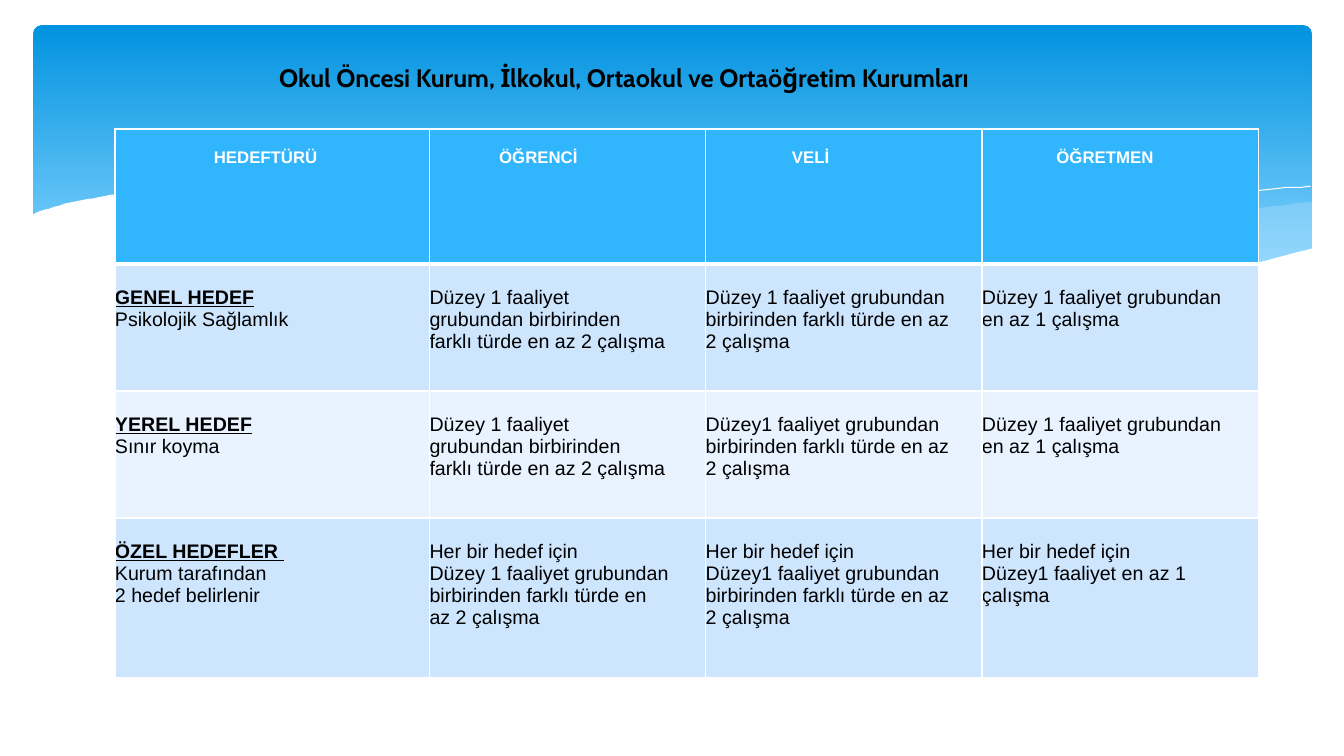
from dataclasses import dataclass
from typing import NamedTuple

import lxml.etree
import pptx
import pptx.dml.color
import pptx.enum.shapes
import pptx.enum.text
import pptx.oxml
import pptx.oxml.ns
import pptx.util

EMU_PER_PX = 9144
Point = tuple[float, float]
Curve = list[Point]


@dataclass(frozen=True)
class Theme:
    white: str = "FFFFFF"
    black: str = "000000"
    sky_top: str = "0293E0"
    sky_bottom: str = "83D3FE"
    wave: str = "C6E7FC"
    header: str = "31B6FD"
    band_dark: str = "CEE5FE"
    band_light: str = "E8F3FF"
    title_font: str = "Cabin"
    table_font: str = "Arial"
    title_size: int = 18
    header_size: int = 12
    body_size: int = 14
    thin: int = 1
    thick: int = 3


THEME = Theme()


class Wave(NamedTuple):
    curves: list[Curve]
    fill: str | None = None
    opacity: int = 100


class Entry(NamedTuple):
    lines: list[str]
    right_inset: int
    titled: bool = False


class Band(NamedTuple):
    height: int
    fill: str
    entries: list[Entry]
    is_header: bool = False


WAVES = [
    Wave([[(1301, 200), (1246, 207), (1188, 216), (1147, 223), (1073, 237),
           (1005, 248), (941, 257), (882, 265)],
          [(882, 265), (940, 271), (993, 275), (1041, 277), (1085, 278), (1126, 277),
           (1163, 274), (1196, 270), (1228, 265), (1257, 259), (1301, 247)]],
         THEME.wave, 29),
    Wave([[(1190, 273), (1116, 265), (1034, 254), (941, 240), (839, 222), (778, 211),
           (721, 203), (669, 196), (619, 191), (560, 187), (506, 185), (459, 186),
           (418, 188), (382, 191)],
          [(382, 191), (456, 199), (511, 207), (599, 222), (706, 240), (802, 255),
           (887, 266), (963, 274), (1030, 277), (1090, 278), (1143, 277), (1190, 273)]],
         THEME.wave, 40),
    Wave([[(412, 195), (458, 190), (516, 187), (577, 187), (652, 190), (742, 197),
           (848, 208), (970, 226), (1108, 251), (1210, 272)]]),
    Wave([[(818, 257), (870, 246), (927, 235), (997, 223), (1075, 210), (1155, 199),
           (1213, 192), (1267, 187), (1300, 185)]]),
    Wave([[(1303, 246), (1254, 259), (1198, 269), (1134, 275), (1078, 277), (1015, 275),
           (944, 270), (863, 262), (772, 250), (671, 233), (596, 220), (521, 207),
           (453, 197), (390, 190), (333, 186), (282, 184), (235, 184), (194, 185),
           (158, 187), (127, 191), (101, 195), (79, 199), (54, 205), (31, 213)],
          [(31, 213), (31, 329)], [(31, 329), (1303, 329)]],
         THEME.white),
]

COLUMN_WIDTHS = [312, 274, 274, 274]
ONE_ACTIVITY = "Düzey 1 faaliyet grubundan en az 1 çalışma"
TWO_ACTIVITIES = "Düzey 1 faaliyet grubundan birbirinden farklı türde en az 2 çalışma"
TWO_ACTIVITIES_JOINED = TWO_ACTIVITIES.replace("Düzey 1", "Düzey1")
EACH_GOAL = "Her bir hedef için"

BANDS = [
    Band(134, THEME.header, [
        Entry(["HEDEFTÜRÜ"], 13), Entry(["ÖĞRENCİ"], 58),
        Entry(["VELİ"], 66), Entry(["ÖĞRETMEN"], 30)], True),
    Band(126, THEME.band_dark, [
        Entry(["GENEL HEDEF", "Psikolojik Sağlamlık"], 0, True),
        Entry([TWO_ACTIVITIES], 39), Entry([TWO_ACTIVITIES], 24), Entry([ONE_ACTIVITY], 24)]),
    Band(126, THEME.band_light, [
        Entry(["YEREL HEDEF", "Sınır koyma"], 0, True),
        Entry([TWO_ACTIVITIES], 39), Entry([TWO_ACTIVITIES_JOINED], 24),
        Entry([ONE_ACTIVITY], 24)]),
    Band(158, THEME.band_dark, [
        Entry(["ÖZEL HEDEFLER ", "Kurum tarafından", "2 hedef belirlenir"], 0, True),
        Entry([EACH_GOAL, TWO_ACTIVITIES], 34),
        Entry([EACH_GOAL, TWO_ACTIVITIES_JOINED], 24),
        Entry([EACH_GOAL, "Düzey1 faaliyet en az 1 çalışma"], 24)]),
]


def px(length: int) -> pptx.util.Emu:
    return pptx.util.Emu(length * EMU_PER_PX)


def rgb(colour: str) -> pptx.dml.color.RGBColor:
    return pptx.dml.color.RGBColor.from_string(colour)


def smooth(curve: Curve, steps: int = 5) -> Curve:
    padded = [curve[0], *curve, curve[-1]]
    points = [curve[0]]
    for a, b, c, d in zip(padded, padded[1:], padded[2:], padded[3:]):
        for step in range(1, steps + 1):
            t = step / steps
            points.append(tuple(
                (2 * q + (r - p) * t + (2 * p - 5 * q + 4 * r - s) * t ** 2
                 + (3 * q - p - 3 * r + s) * t ** 3) / 2
                for p, q, r, s in zip(a, b, c, d)))
    return points


def draw_sky(slide) -> None:
    sky = slide.shapes.add_shape(
        pptx.enum.shapes.MSO_SHAPE.ROUNDED_RECTANGLE, px(33), px(25), px(1268), px(270))
    sky.adjustments[0] = 0.03
    sky.shadow.inherit = False
    sky.line.fill.background()
    sky.fill.gradient()
    sky.fill.gradient_angle = 270
    stops = [(0, THEME.sky_top), (0.9, THEME.sky_bottom)]
    for stop, (position, colour) in zip(sky.fill.gradient_stops, stops):
        stop.position = position
        stop.color.rgb = rgb(colour)


def draw_wave(slide, wave: Wave) -> None:
    points = [point for curve in wave.curves for point in smooth(curve)]
    builder = slide.shapes.build_freeform(*points[0], scale=EMU_PER_PX)
    builder.add_line_segments(points[1:], close=wave.fill is not None)
    outline = builder.convert_to_shape()
    outline.shadow.inherit = False
    if wave.fill is None:
        outline.fill.background()
        outline.line.color.rgb = rgb(THEME.white)
        outline.line.width = pptx.util.Pt(0)
        return
    outline.line.fill.background()
    outline.fill.solid()
    outline.fill.fore_color.rgb = rgb(wave.fill)
    if wave.opacity < 100:
        colour = outline.fill._xPr.find(".//" + pptx.oxml.ns.qn("a:srgbClr"))
        lxml.etree.SubElement(
            colour, pptx.oxml.ns.qn("a:alpha"), val=str(wave.opacity * 1000))


def write_run(paragraph, text: str, font: str, size: int, colour: str,
              bold: bool = False, underline: bool = False) -> None:
    run = paragraph.add_run()
    run.text = text
    run.font.name = font
    run.font.size = pptx.util.Pt(size)
    run.font.color.rgb = rgb(colour)
    run.font.bold = bold
    run.font.underline = underline


def draw_borders(cell, top: int, bottom: int) -> None:
    properties = cell._tc.get_or_add_tcPr()
    sides = {"L": THEME.thin, "R": THEME.thin, "T": top, "B": bottom}
    for index, (side, width) in enumerate(sides.items()):
        border = pptx.oxml.parse_xml(
            f'<a:ln{side} {pptx.oxml.ns.nsdecls("a")} w="{pptx.util.Pt(width)}">'
            f'<a:solidFill><a:srgbClr val="{THEME.white}"/></a:solidFill></a:ln{side}>')
        properties.insert(index, border)


def fill_cell(cell, entry: Entry, band: Band) -> None:
    size = THEME.header_size if band.is_header else THEME.body_size
    cell.margin_left = cell.margin_bottom = 0
    cell.margin_top = px(19 if band.is_header else 22)
    cell.margin_right = px(entry.right_inset)
    cell.fill.solid()
    cell.fill.fore_color.rgb = rgb(band.fill)
    for number, line in enumerate(entry.lines):
        frame = cell.text_frame
        paragraph = frame.add_paragraph() if number else frame.paragraphs[0]
        if band.is_header:
            paragraph.alignment = pptx.enum.text.PP_ALIGN.CENTER
        heading = entry.titled and number == 0
        write_run(paragraph, line, THEME.table_font, size,
                  THEME.white if band.is_header else THEME.black,
                  band.is_header or heading, heading)


def draw_goals(slide) -> None:
    goals = slide.shapes.add_table(
        len(BANDS), len(COLUMN_WIDTHS), px(114), px(128),
        px(sum(COLUMN_WIDTHS)), px(sum(band.height for band in BANDS))).table
    goals.horz_banding = False
    for column, width in zip(goals.columns, COLUMN_WIDTHS):
        column.width = px(width)
    for index, (row, band) in enumerate(zip(goals.rows, BANDS)):
        row.height = px(band.height)
        for cell, entry in zip(row.cells, band.entries):
            fill_cell(cell, entry, band)
            draw_borders(cell, THEME.thick if index == 1 else THEME.thin,
                         THEME.thick if band.is_header else THEME.thin)


def draw_title(slide) -> None:
    title = slide.shapes.add_textbox(px(267), px(57), px(940), px(40)).text_frame
    title.word_wrap = True
    write_run(title.paragraphs[0],
              "Okul Öncesi Kurum, İlkokul, Ortaokul ve Ortaöğretim Kurumları",
              THEME.title_font, THEME.title_size, THEME.black, True)


def main() -> None:
    deck = pptx.Presentation()
    deck.slide_width, deck.slide_height = px(1333), px(750)
    slide = deck.slides.add_slide(deck.slide_layouts[6])
    draw_sky(slide)
    for wave in WAVES:
        draw_wave(slide, wave)
    draw_goals(slide)
    draw_title(slide)
    deck.save("out.pptx")


if __name__ == "__main__":
    main()
